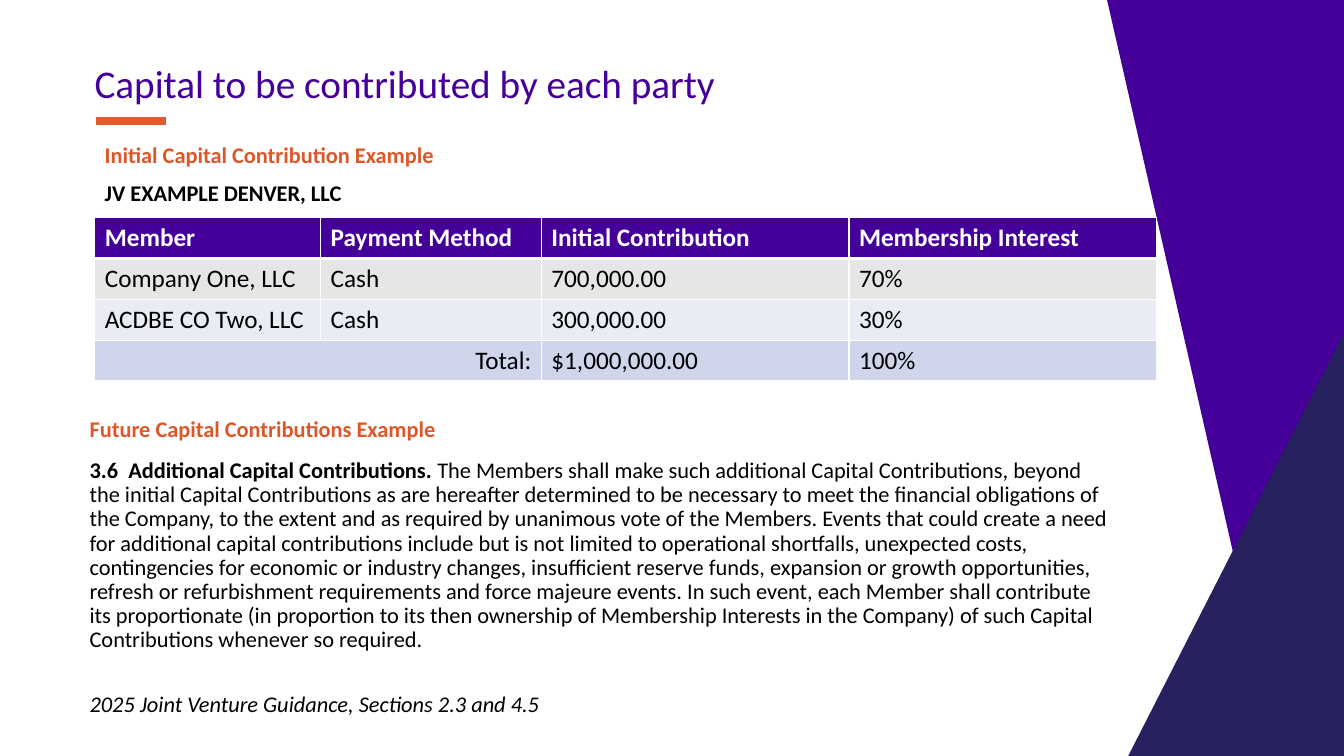
from dataclasses import dataclass

from lxml import etree
from pptx import Presentation
from pptx import util as u
from pptx.dml.color import RGBColor
from pptx.enum import shapes, text
from pptx.oxml import ns

FONT = "Calibri"
COLORS = {
    "purple": "440099",
    "navy": "282160",
    "bar": "E35B2A",
    "orange": "DC582A",
    "black": "000000",
    "white": "FFFFFF",
    "gray": "E7E6E6",
    "pale": "E9EBF5",
    "total": "CFD5EA",
}


@dataclass
class Span:
    content: str
    bold: bool = False


@dataclass
class Para:
    spans: list[Span]
    color: str = "black"
    size: float = 16
    before: float = 0
    bold: bool | None = None
    italic: bool = False


@dataclass
class Box:
    left: float
    top: float
    width: float
    height: float
    paras: list[Para]
    anchor: text.MSO_ANCHOR = text.MSO_ANCHOR.TOP


@dataclass
class Panel:
    color: str
    points: list[tuple[float, float]]


@dataclass
class Row:
    fill: str
    values: list[str]
    color: str = "black"
    bold: bool = False
    rule: float = 1


PANELS = [
    Panel("purple", [(10.98, 0), (13.33, 0), (13.33, 7.5), (12.69, 7.5)]),
    Panel("navy", [(13.33, 3.3), (13.33, 7.5), (11.19, 7.5)]),
]

CLAUSE = (
    " The Members shall make such additional Capital Contributions, beyond the initial "
    "Capital Contributions as are hereafter determined to be necessary to meet the "
    "financial obligations of the Company, to the extent and as required by unanimous "
    "vote of the Members. Events that could create a need for additional capital "
    "contributions include but is not limited to operational shortfalls, unexpected "
    "costs, contingencies for economic or industry changes, insufficient reserve funds, "
    "expansion or growth opportunities, refresh or refurbishment requirements and force "
    "majeure events. In such event, each Member shall contribute its proportionate (in "
    "proportion to its then ownership of Membership Interests in the Company) of such "
    "Capital Contributions whenever so required."
)

BOXES = [
    Box(0.84, 0.62, 10, 0.47, [
        Para([Span("Capital to be contributed by each party")], "purple", 28),
    ], text.MSO_ANCHOR.MIDDLE),
    Box(0.94, 1.38, 9.51, 0.75, [
        Para([Span("Initial Capital Contribution Example")], "orange", bold=True),
        Para([Span("JV EXAMPLE DENVER, LLC")], before=10, bold=True),
    ]),
    Box(0.79, 4.1, 10.32, 3.1, [
        Para([Span("Future Capital Contributions Example")], "orange", bold=True),
        Para([Span("3.6  Additional Capital Contributions.", True), Span(CLAUSE)],
             before=12.1),
        Para([Span("2025 Joint Venture Guidance, Sections 2.3 and 4.5")],
             before=29, italic=True),
    ]),
]

COLUMNS = [2.24, 2.19, 3.05, 3.05]
ROW_HEIGHT = 0.405
ROWS = [
    Row("purple", ["Member", "Payment Method", "Initial Contribution",
                   "Membership Interest"], "white", True, 3),
    Row("gray", ["Company One, LLC", "Cash", "700,000.00", "70%"]),
    Row("pale", ["ACDBE CO Two, LLC", "Cash", "300,000.00", "30%"]),
    Row("total", ["Total:", "", "$1,000,000.00", "100%"]),
]


def rgb(name: str) -> RGBColor:
    return RGBColor.from_string(COLORS[name])


def draw_bar(page) -> None:
    bar = page.shapes.add_connector(
        shapes.MSO_CONNECTOR.STRAIGHT,
        u.Inches(0.95), u.Inches(1.2), u.Inches(1.65), u.Inches(1.2))
    bar.line.color.rgb = rgb("bar")
    bar.line.width = u.Pt(6)
    etree.SubElement(bar._element.spPr, ns.qn("a:effectLst"))


def draw_panel(page, panel: Panel) -> None:
    points = [(u.Inches(x), u.Inches(y)) for x, y in panel.points]
    builder = page.shapes.build_freeform(*points[0])
    builder.add_line_segments(points[1:], close=True)
    shape = builder.convert_to_shape()
    shape.shadow.inherit = False
    shape.fill.solid()
    shape.fill.fore_color.rgb = rgb(panel.color)
    shape.line.fill.background()


def draw_box(page, box: Box) -> None:
    shape = page.shapes.add_textbox(
        u.Inches(box.left), u.Inches(box.top), u.Inches(box.width), u.Inches(box.height))
    frame = shape.text_frame
    frame.word_wrap = True
    frame.vertical_anchor = box.anchor
    for index, para in enumerate(box.paras):
        paragraph = frame.add_paragraph() if index else frame.paragraphs[0]
        paragraph.line_spacing = 0.9
        paragraph.space_before = u.Pt(para.before)
        paragraph.font.name = FONT
        paragraph.font.size = u.Pt(para.size)
        paragraph.font.color.rgb = rgb(para.color)
        paragraph.font.bold = para.bold
        paragraph.font.italic = para.italic
        for span in para.spans:
            run = paragraph.add_run()
            run.text = span.content
            if span.bold:
                run.font.bold = True


def draw_borders(cell, above: float, below: float) -> None:
    properties = cell._tc.get_or_add_tcPr()
    widths = {"lnL": 1, "lnR": 1, "lnT": above, "lnB": below}
    for index, (tag, width) in enumerate(widths.items()):
        line = etree.Element(ns.qn(f"a:{tag}"), w=str(u.Pt(width)))
        fill = etree.SubElement(line, ns.qn("a:solidFill"))
        etree.SubElement(fill, ns.qn("a:srgbClr"), val=COLORS["white"])
        properties.insert(index, line)


def draw_table(page) -> None:
    table = page.shapes.add_table(
        len(ROWS), len(COLUMNS), u.Inches(0.94), u.Inches(2.16),
        u.Inches(sum(COLUMNS)), u.Inches(ROW_HEIGHT * len(ROWS))).table
    for column, width in zip(table.columns, COLUMNS):
        column.width = u.Inches(width)
    above = 1
    for line, row in zip(table.rows, ROWS):
        line.height = u.Inches(ROW_HEIGHT)
        for cell, value in zip(line.cells, row.values):
            cell.fill.solid()
            cell.fill.fore_color.rgb = rgb(row.fill)
            draw_borders(cell, above, row.rule)
            cell.text = value
            font = cell.text_frame.paragraphs[0].font
            font.name = FONT
            font.size = u.Pt(18)
            font.bold = row.bold
            font.color.rgb = rgb(row.color)
        above = row.rule
    last = len(ROWS) - 1
    total = table.cell(last, 0)
    total.merge(table.cell(last, 1))
    total.text_frame.paragraphs[0].alignment = text.PP_ALIGN.RIGHT


def main() -> None:
    deck = Presentation()
    deck.slide_width = u.Inches(13.33)
    deck.slide_height = u.Inches(7.5)
    page = deck.slides.add_slide(deck.slide_layouts[6])
    draw_bar(page)
    for panel in PANELS:
        draw_panel(page, panel)
    for box in BOXES:
        draw_box(page, box)
    draw_table(page)
    deck.save("out.pptx")


if __name__ == "__main__":
    main()
